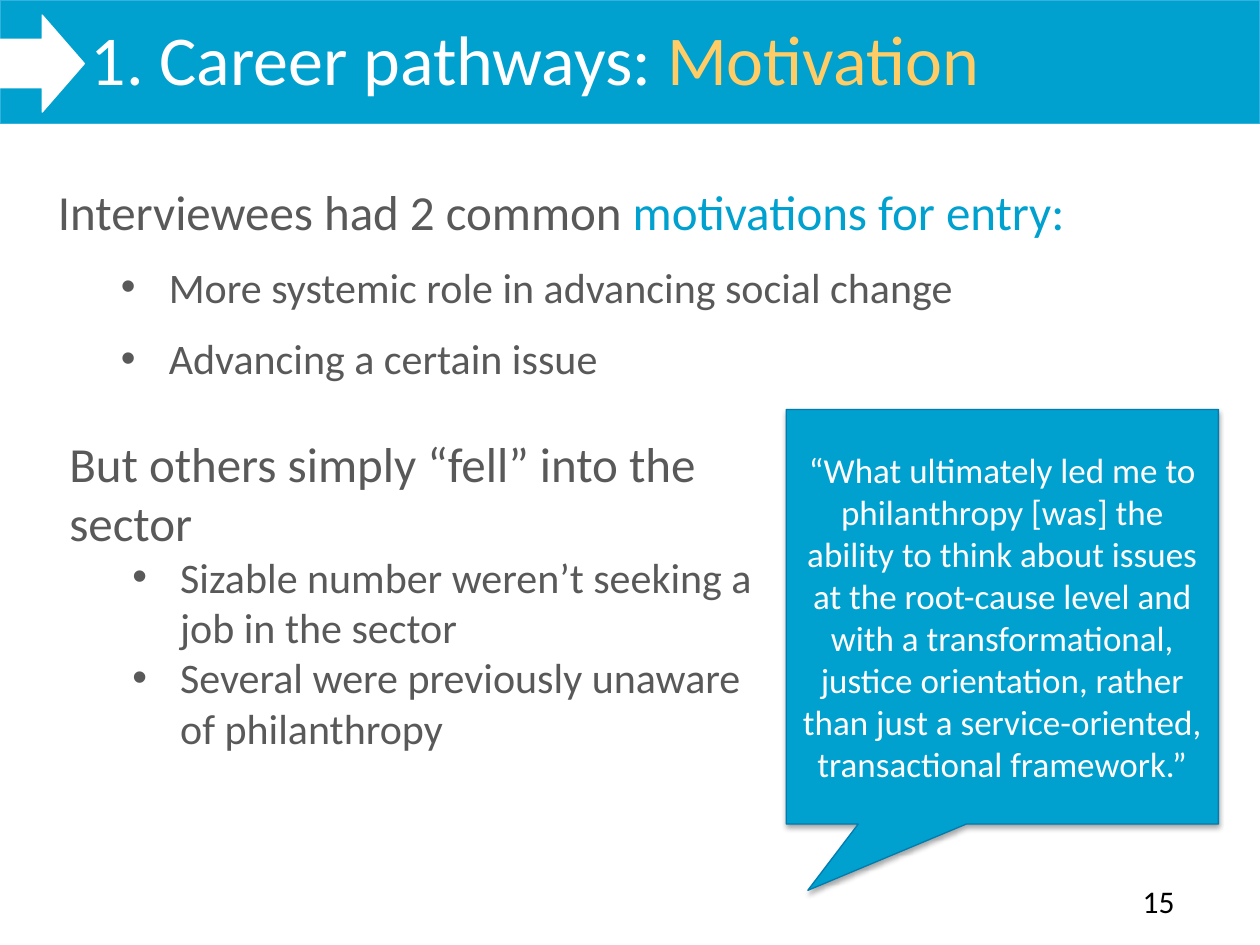
from dataclasses import dataclass

from lxml.etree import SubElement
from pptx import Presentation
from pptx.dml.color import RGBColor
from pptx.enum.shapes import MSO_SHAPE as Preset
from pptx.enum.text import MSO_ANCHOR as Anchor, MSO_AUTO_SIZE as AutoSize, PP_ALIGN as Align
from pptx.oxml.ns import qn
from pptx.util import Inches, Pt

WIDTH, HEIGHT = Inches(10), Inches(7.5)
COLUMNS, ROWS = 100, 75
TWO_CONTENT = 3
FONT = "Calibri"
COLORS = {
    "blue": "00A0CF",
    "band edge": "32B2DD",
    "callout edge": "007CAE",
    "white": "FFFFFF",
    "gold": "FFCC66",
    "gray": "595959",
    "black": "000000",
}


@dataclass(frozen=True)
class Box:
    """A place on the grid, in columns and rows."""
    column: float
    row: float
    columns: float
    rows: float

    def lengths(self) -> tuple[int, int, int, int]:
        across, down = WIDTH / COLUMNS, HEIGHT / ROWS
        return (int(self.column * across), int(self.row * down),
                int(self.columns * across), int(self.rows * down))


@dataclass(frozen=True)
class Section:
    """A lead sentence, its highlighted ending and its bullets."""
    box: Box
    lead: str
    highlight: str
    bullets: tuple[str, ...]
    space_after: float


SECTIONS = (
    Section(Box(3.6, 13.9, 94.3, 17.2), "Interviewees had 2 common ", "motivations for entry:",
            ("More systemic role in advancing social change", "Advancing a certain issue"), 12),
    Section(Box(4.5, 33.9, 56.8, 26.6), "But others simply “fell” into the sector", "",
            ("Sizable number weren’t seeking a job in the sector",
             "Several were previously unaware of philanthropy"), 0),
)
QUOTE = ("“What ultimately led me to philanthropy [was] the ability to think about issues "
         "at the root-cause level and with a transformational, justice orientation, rather "
         "than just a service-oriented, transactional framework.”")


def color(name: str) -> RGBColor:
    return RGBColor.from_string(COLORS[name])


def place(shape, box: Box) -> None:
    shape.left, shape.top, shape.width, shape.height = box.lengths()


def add_text(paragraph, text: str, *, size: float, fill: str) -> None:
    run = paragraph.add_run()
    run.text = text
    run.font.name, run.font.size = FONT, Pt(size)
    run.font.color.rgb = color(fill)


def add_preset(slide, preset, box: Box, *, fill: str, edge: str):
    shape = slide.shapes.add_shape(preset, *box.lengths())
    shape.shadow.inherit = False
    shape.fill.solid()
    shape.fill.fore_color.rgb = color(fill)
    shape.line.color.rgb = color(edge)
    shape.line.width = Pt(0.75)
    return shape


def prepare_frame(shape):
    frame = shape.text_frame
    frame.word_wrap = True
    frame.auto_size = AutoSize.NONE
    frame.vertical_anchor = Anchor.TOP
    return frame


def format_paragraph(paragraph, *, margin: float = 0, indent: float = 0,
                     bullet: str = "", after: float = 0) -> None:
    paragraph.space_before, paragraph.space_after = Pt(0), Pt(after)
    properties = paragraph._p.get_or_add_pPr()
    properties.set("marL", str(Inches(margin)))
    properties.set("indent", str(Inches(indent)))
    if bullet:
        SubElement(properties, qn("a:buFont"), typeface="Arial")
        SubElement(properties, qn("a:buChar"), char=bullet)
    else:
        SubElement(properties, qn("a:buNone"))


def fill_section(placeholder, section: Section) -> None:
    place(placeholder, section.box)
    frame = prepare_frame(placeholder)
    lead = frame.paragraphs[0]
    format_paragraph(lead, after=section.space_after)
    add_text(lead, section.lead, size=28, fill="gray")
    if section.highlight:
        add_text(lead, section.highlight, size=28, fill="blue")
    for text in section.bullets:
        item = frame.add_paragraph()
        item.level = 1
        format_paragraph(item, margin=0.88, indent=-0.38, bullet="•", after=section.space_after)
        add_text(item, text, size=24, fill="gray")


def add_shadow(shape, *, fill: str, opacity: int, blur: float, distance: float) -> None:
    effects = shape.element.spPr.find(qn("a:effectLst"))
    shadow = SubElement(effects, qn("a:outerShdw"), blurRad=str(Pt(blur)), dist=str(Pt(distance)),
                        dir=str(90 * 60000), rotWithShape="0")
    tint = SubElement(shadow, qn("a:srgbClr"), val=COLORS[fill])
    SubElement(tint, qn("a:alpha"), val=str(opacity * 1000))


def build_header(slide) -> None:
    title = slide.shapes.title
    band = add_preset(slide, Preset.RECTANGLE, Box(0, 0, COLUMNS, 9.8),
                      fill="blue", edge="band edge")
    arrow = add_preset(slide, Preset.RIGHT_ARROW, Box(0, 1.2, 6.7, 7.7),
                       fill="white", edge="white")
    for backdrop in (band, arrow):
        title.element.addprevious(backdrop.element)
    place(title, Box(0, 0.7, COLUMNS, 12.5))
    heading = prepare_frame(title).paragraphs[0]
    heading.alignment = Align.LEFT
    format_paragraph(heading, margin=0.62)
    add_text(heading, "1. Career pathways: ", size=40, fill="white")
    add_text(heading, "Motivation", size=40, fill="gold")


def build_quote(slide) -> None:
    callout = add_preset(slide, Preset.RECTANGULAR_CALLOUT, Box(62.4, 32.5, 34.3, 32.9),
                         fill="blue", edge="callout edge")
    callout.adjustments[0], callout.adjustments[1] = -0.45, 0.66
    add_shadow(callout, fill="black", opacity=35, blur=3.1, distance=1.8)
    frame = prepare_frame(callout)
    frame.vertical_anchor = Anchor.MIDDLE
    frame.paragraphs[0].alignment = Align.CENTER
    add_text(frame.paragraphs[0], QUOTE, size=20, fill="white")


def build_page_number(slide) -> None:
    number = slide.shapes.add_textbox(*Box(89.7, 69.5, 5.3, 4).lengths())
    add_text(prepare_frame(number).paragraphs[0], "15", size=18, fill="black")


def main() -> None:
    presentation = Presentation()
    presentation.slide_width, presentation.slide_height = WIDTH, HEIGHT
    slide = presentation.slides.add_slide(presentation.slide_layouts[TWO_CONTENT])

    # Header band with its arrow and title
    build_header(slide)

    # Both lists, in the layout's two body placeholders
    for index, section in enumerate(SECTIONS, start=1):
        fill_section(slide.placeholders[index], section)

    # Quotation and page number
    build_quote(slide)
    build_page_number(slide)

    presentation.save("out.pptx")


if __name__ == "__main__":
    main()
